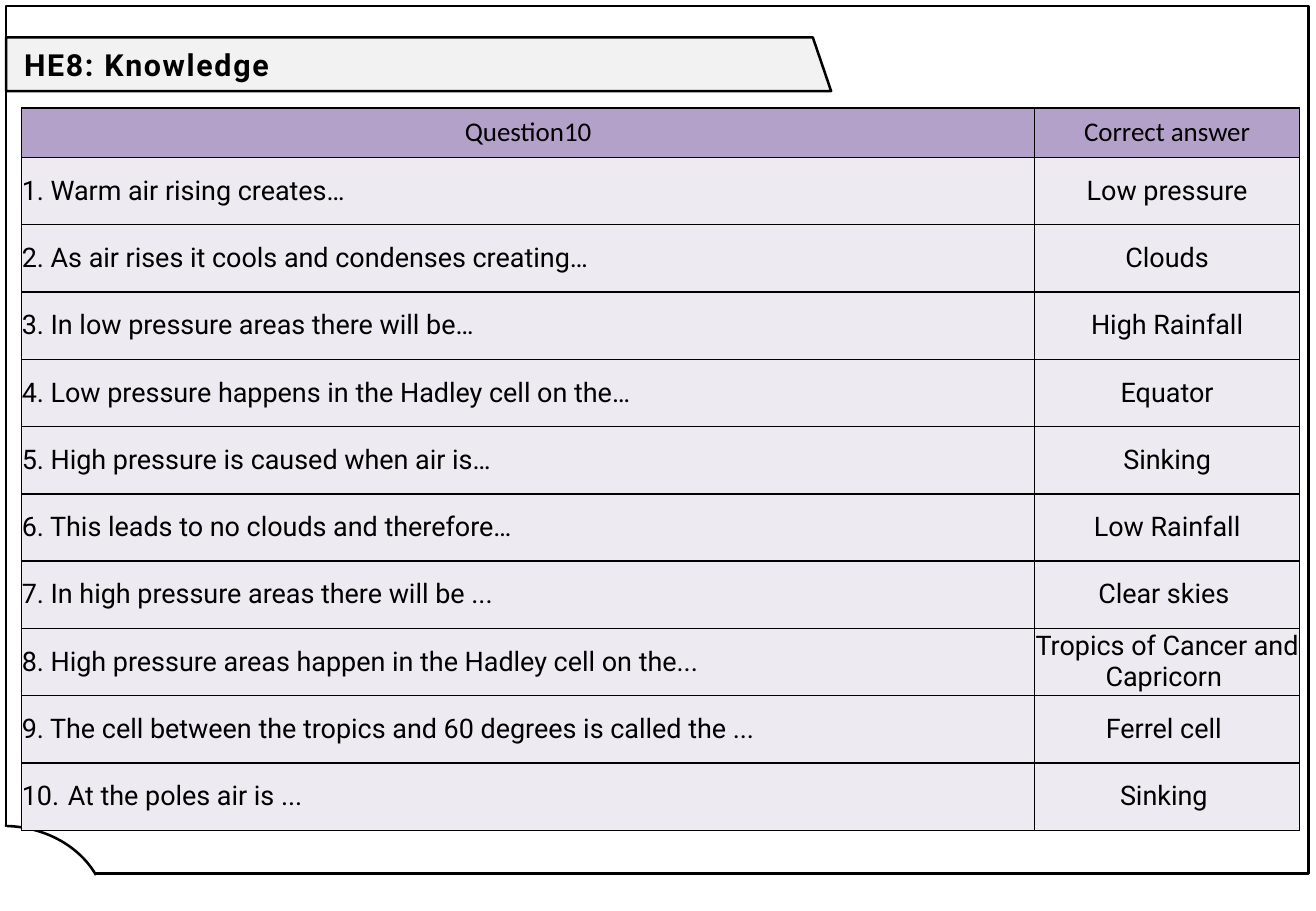
from dataclasses import dataclass

from lxml.etree import SubElement
from pptx import Presentation
from pptx.dml.color import RGBColor
from pptx.dml.fill import FillFormat
from pptx.enum.shapes import MSO_SHAPE
from pptx.enum.text import MSO_ANCHOR, PP_ALIGN
from pptx.oxml.ns import qn
from pptx.shapes.autoshape import Shape
from pptx.slide import Slide
from pptx.table import _Cell
from pptx.text.text import TextFrame, _Paragraph
from pptx.util import Emu, Pt

EMU_PER_PX = 3810
BLACK, WHITE = "000000", "FFFFFF"
BANNER_GREY, HEADER_PURPLE, ROW_LILAC = "F2F2F2", "B4A1CA", "EDEAF1"
BANNER_OUTLINE = [(12, 74), (1606, 74), (1642, 180), (12, 180)]
COLUMN_WIDTHS = [2001, 524]
HEADER_HEIGHT, ROW_HEIGHT = 98, 133
BORDER_TAGS = ["a:lnL", "a:lnR", "a:lnT", "a:lnB"]


@dataclass(frozen=True)
class Panel:
    preset: MSO_SHAPE
    left: int
    top: int
    width: int
    height: int
    fill: str | None = None
    line: str | None = None
    angles: tuple[float, ...] = ()


@dataclass(frozen=True)
class Quiz:
    question: str
    answer: str
    auto_number: int | None = None


PANELS = [
    Panel(MSO_SHAPE.RECTANGLE, 12, 12, 2573, 1714, line=BLACK),
    Panel(MSO_SHAPE.ARC, -197, 1632, 408, 348, WHITE, BLACK, (162.53, 202.27)),
    Panel(MSO_SHAPE.RECTANGLE, 2, 1634, 12, 24, WHITE),
]

QUIZZES = [
    Quiz("1. Warm air rising creates…", "Low pressure"),
    Quiz("2. As air rises it cools and condenses creating…", "Clouds"),
    Quiz("3. In low pressure areas there will be…", "High Rainfall"),
    Quiz("4. Low pressure happens in the Hadley cell on the…", "Equator"),
    Quiz("5. High pressure is caused when air is…", "Sinking"),
    Quiz("6. This leads to no clouds and therefore…", "Low Rainfall"),
    Quiz("7. In high pressure areas there will be ...", "Clear skies "),
    Quiz("8. High pressure areas happen in the Hadley cell on the...",
         "Tropics of Cancer and Capricorn "),
    Quiz("9. The cell between the tropics and 60 degrees is called the ...",
         "Ferrel cell "),
    Quiz("At the poles air is ...", "Sinking ", auto_number=10),
]


def px(length: int) -> Emu:
    """Turn pixels into EMU."""
    return Emu(length * EMU_PER_PX)


def colour(value: str) -> RGBColor:
    """Turn a hex string into a colour."""
    return RGBColor.from_string(value)


def paint(fill: FillFormat, value: str | None) -> None:
    """Apply a solid fill, or none."""
    if value is None:
        fill.background()
    else:
        fill.solid()
        fill.fore_color.rgb = colour(value)


def style_shape(shape: Shape, fill: str | None, line: str | None) -> None:
    """Set the fill and outline of a shape."""
    shape.shadow.inherit = False
    paint(shape.fill, fill)
    paint(shape.line.fill, line)
    if line is not None:
        shape.line.width = Pt(1.5)


def write(frame: TextFrame, text: str, *, size: int = 16, font: str = "Roboto",
          bold: bool = False, centred: bool = False,
          number: int | None = None) -> _Paragraph:
    """Write one formatted paragraph into a text frame."""
    frame.word_wrap = True
    paragraph = frame.paragraphs[0]
    paragraph.alignment = PP_ALIGN.CENTER if centred else PP_ALIGN.LEFT
    if number is not None:
        properties = paragraph._p.get_or_add_pPr()
        properties.set("marL", str(px(91)))
        properties.set("indent", str(px(-91)))
        SubElement(properties, qn("a:buFont"), typeface=font)
        SubElement(properties, qn("a:buAutoNum"), type="arabicPeriod",
                   startAt=str(number))
    run = paragraph.add_run()
    run.text = text
    run.font.size = Pt(size)
    run.font.name = font
    run.font.bold = bold
    run.font.color.rgb = colour(BLACK)
    return paragraph


def draw_banner(slide: Slide) -> None:
    """Draw the slanted band behind the title."""
    start, *corners = [(px(x), px(y)) for x, y in BANNER_OUTLINE]
    builder = slide.shapes.build_freeform(*start, scale=1.0)
    builder.add_line_segments(corners, close=True)
    style_shape(builder.convert_to_shape(), BANNER_GREY, BLACK)


def draw_panel(slide: Slide, panel: Panel) -> None:
    """Draw one preset shape of the page frame."""
    shape = slide.shapes.add_shape(panel.preset, px(panel.left), px(panel.top),
                                   px(panel.width), px(panel.height))
    for index, angle in enumerate(panel.angles):
        shape.adjustments[index] = angle
    style_shape(shape, panel.fill, panel.line)


def draw_title(slide: Slide) -> None:
    """Write the title over the banner."""
    title = slide.shapes.add_textbox(px(24), px(50), px(1543), px(151))
    title.text_frame.vertical_anchor = MSO_ANCHOR.MIDDLE
    paragraph = write(title.text_frame, "HE8: Knowledge", size=18, bold=True)
    paragraph.line_spacing = 1.07
    paragraph.space_after = Pt(8)
    paragraph.runs[0].font._element.set("spc", "100")


def style_cell(cell: _Cell, fill: str) -> None:
    """Give a cell its borders, fill and zero margins."""
    cell.margin_left = cell.margin_right = cell.margin_top = cell.margin_bottom = 0
    cell.vertical_anchor = MSO_ANCHOR.MIDDLE
    properties = cell._tc.get_or_add_tcPr()
    for tag in BORDER_TAGS:
        border = SubElement(properties, qn(tag), w=str(Pt(1)))
        solid = SubElement(border, qn("a:solidFill"))
        SubElement(solid, qn("a:srgbClr"), val=BLACK)
    paint(cell.fill, fill)


def draw_quiz_table(slide: Slide) -> None:
    """Draw the table of questions and answers."""
    height = HEADER_HEIGHT + ROW_HEIGHT * len(QUIZZES)
    table = slide.shapes.add_table(
        len(QUIZZES) + 1, len(COLUMN_WIDTHS), px(43), px(213),
        px(sum(COLUMN_WIDTHS)), px(height)).table
    for column, width in zip(table.columns, COLUMN_WIDTHS):
        column.width = px(width)
    for index, row in enumerate(table.rows):
        row.height = px(ROW_HEIGHT if index else HEADER_HEIGHT)
        for cell in row.cells:
            style_cell(cell, ROW_LILAC if index else HEADER_PURPLE)
    for index, heading in enumerate(["Question10", "Correct answer"]):
        write(table.cell(0, index).text_frame, heading, font="Calibri", centred=True)
    for index, quiz in enumerate(QUIZZES, start=1):
        write(table.cell(index, 0).text_frame, quiz.question, number=quiz.auto_number)
        write(table.cell(index, 1).text_frame, quiz.answer, centred=True)


def main() -> None:
    """Build and save the slide."""
    deck = Presentation()
    deck.slide_width, deck.slide_height = px(2600), px(1800)
    slide = deck.slides.add_slide(deck.slide_layouts[6])
    paint(slide.background.fill, WHITE)
    draw_banner(slide)
    for panel in PANELS:
        draw_panel(slide, panel)
    draw_title(slide)
    draw_quiz_table(slide)
    deck.save("out.pptx")


if __name__ == "__main__":
    main()
